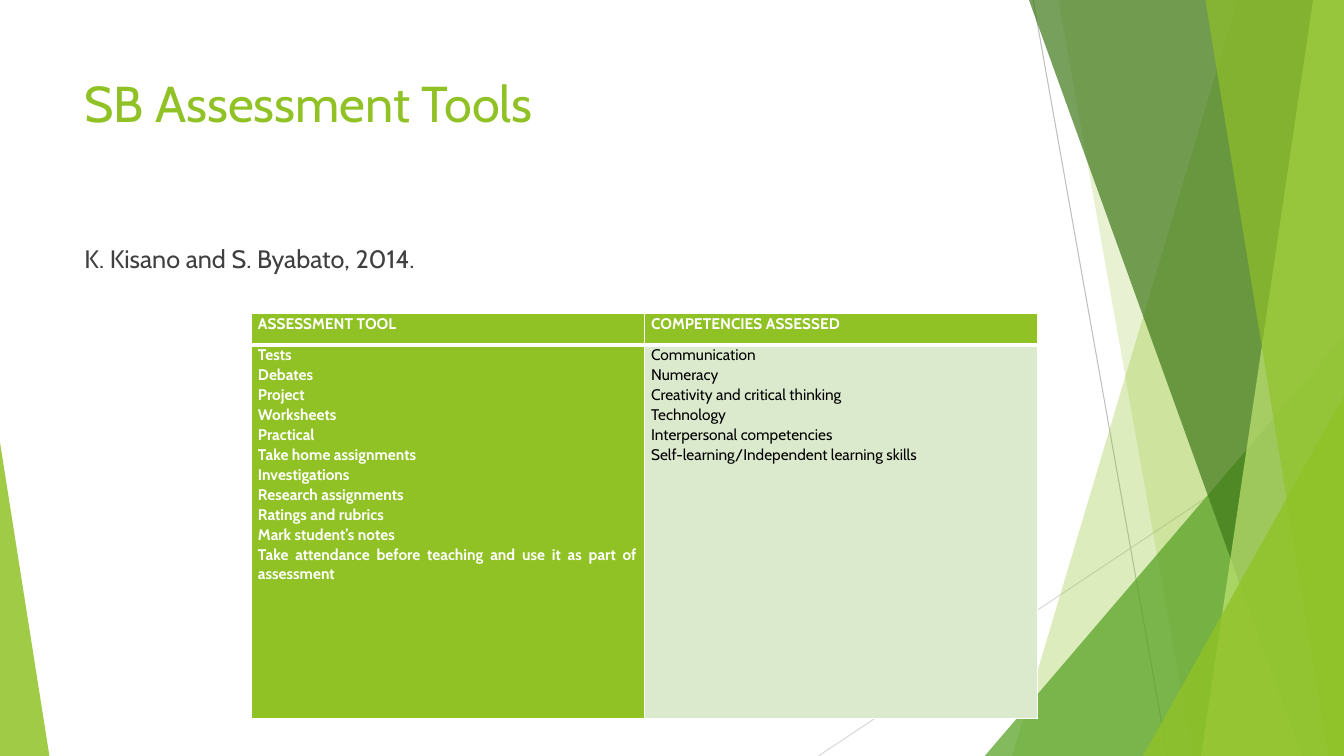
from pptx import Presentation, util as u
from pptx.dml import color
from pptx.enum import shapes, text
from pptx.oxml import ns
from lxml import etree

WIDTH, HEIGHT = 960, 540
GREEN, WHITE = "90C226", "FFFFFF"


def rgb(value):
    return color.RGBColor.from_string(value)


def apply(target, values):
    for name, value in values.items():
        setattr(target, name, value)


def child(parent, tag, **attributes):
    return etree.SubElement(parent, ns.qn(tag), attributes)


class Painter:
    font = "Cabin"

    def __init__(self, page):
        self.page = page

    def line(self, start, end, tone):
        ends = [u.Pt(value) for value in start + end]
        connector = self.page.shapes.add_connector(shapes.MSO_CONNECTOR.STRAIGHT, *ends)
        connector.line.width = u.Pt(0.75)
        connector.line.color.rgb = rgb(tone)
        child(connector.element.spPr, "a:effectLst")

    def paint(self, shape, tone, opacity):
        shape.shadow.inherit = False
        shape.line.fill.background()
        shape.fill.solid()
        shape.fill.fore_color.rgb = rgb(tone)
        solid = shape.element.spPr.find(".//" + ns.qn("a:srgbClr"))
        child(solid, "a:alpha", val=str(opacity * 1000))

    def band(self, top, bottom, tone, opacity):
        builder = self.page.shapes.build_freeform(top, 0, scale=u.Pt(1))
        builder.add_line_segments([(WIDTH, 0), (WIDTH, HEIGHT), (bottom, HEIGHT)], close=True)
        self.paint(builder.convert_to_shape(), tone, opacity)

    def triangle(self, left, top, width, apex, tone, opacity):
        bounds = [u.Pt(value) for value in (left, top, width, HEIGHT - top)]
        shape = self.page.shapes.add_shape(shapes.MSO_SHAPE.ISOSCELES_TRIANGLE, *bounds)
        shape.adjustments[0] = apex
        self.paint(shape, tone, opacity)

    def add_words(self, para, words, size, tone, bold=False, **layout):
        apply(para, layout)
        span = para.add_run()
        span.text = words
        apply(span.font, {"name": self.font, "size": u.Pt(size), "bold": bold})
        span.font.color.rgb = rgb(tone)

    def label(self, top, height, words, size, tone, **layout):
        bounds = [u.Pt(value) for value in (53.3, top, 676.8, height)]
        box = self.page.shapes.add_textbox(*bounds)
        box.text_frame.word_wrap = True
        self.add_words(box.text_frame.paragraphs[0], words, size, tone, **layout)

    def border(self, cell, widths):
        properties = cell._tc.get_or_add_tcPr()
        for index, (side, width) in enumerate(widths.items()):
            edge = etree.Element(ns.qn("a:ln" + side), w=str(u.Pt(width)))
            child(child(edge, "a:solidFill"), "a:srgbClr", val=WHITE)
            properties.insert(index, edge)

    def cell(self, cell, lines, fill, tone, bold, widths):
        apply(cell, {"margin_left": u.Pt(5), "margin_right": u.Pt(5),
                     "margin_top": 0, "margin_bottom": 0})
        cell.fill.solid()
        cell.fill.fore_color.rgb = rgb(fill)
        self.border(cell, widths)
        for index, words in enumerate(lines):
            frame = cell.text_frame
            para = frame.add_paragraph() if index else frame.paragraphs[0]
            self.add_words(para, words, 11, tone, bold,
                           alignment=text.PP_ALIGN.JUSTIFY, line_spacing=1.06)

    def table(self, left, top, column_width, heights, columns):
        bounds = [u.Pt(value) for value in
                  (left, top, column_width * len(columns), sum(heights))]
        table = self.page.shapes.add_table(len(heights), len(columns), *bounds).table
        for row, height in zip(table.rows, heights):
            row.height = u.Pt(height)
        for index, (heading, lines, fill, tone, bold) in enumerate(columns):
            table.columns[index].width = u.Pt(column_width)
            self.cell(table.cell(0, index), [heading], GREEN, WHITE, True,
                      {"L": 1, "R": 1, "T": 1, "B": 3})
            self.cell(table.cell(1, index), lines, fill, tone, bold,
                      {"L": 1, "R": 1, "T": 3, "B": 1})


TOOLS = [
    "Tests", "Debates", "Project", "Worksheets", "Practical",
    "Take home assignments", "Investigations", "Research assignments",
    "Ratings and rubrics", "Mark student’s notes",
    "Take attendance before teaching and use it as part of assessment",
]
COMPETENCIES = [
    "Communication", "Numeracy", "Creativity and critical thinking", "Technology",
    "Interpersonal competencies", "Self-learning/Independent learning skills",
]


def main():
    deck = Presentation()
    apply(deck, {"slide_width": u.Pt(WIDTH), "slide_height": u.Pt(HEIGHT)})
    painter = Painter(deck.slides.add_slide(deck.slide_layouts[6]))

    painter.line((738, 0), (834, HEIGHT), "BFBFBF")
    painter.line((WIDTH, 290), (584.6, HEIGHT), "D9D9D9")
    painter.band(884.2, 723, GREEN, 30)
    painter.band(756, 852, GREEN, 20)
    painter.triangle(703.4, 240, 256.6, 1, "54A021", 72)
    painter.band(735, 929.5, "3F7819", 70)
    painter.band(938.2, 858.2, "C0E474", 70)
    painter.band(861, 949, GREEN, 65)
    painter.triangle(816.5, 283, 143.5, 1, GREEN, 80)
    painter.triangle(0, 316, 35.3, 0, GREEN, 85)

    painter.label(48, 104, "SB Assessment Tools", 36, GREEN)
    painter.label(170, 305, "K. Kisano and S. Byabato, 2014.", 18, "404040",
                  space_before=u.Pt(10))
    painter.table(179.3, 224, 280.8, (22.3, 267), [
        ("ASSESSMENT TOOL", TOOLS, GREEN, WHITE, True),
        ("COMPETENCIES ASSESSED", COMPETENCIES, "DBE9CD", "000000", False),
    ])
    deck.save("out.pptx")


if __name__ == "__main__":
    main()
